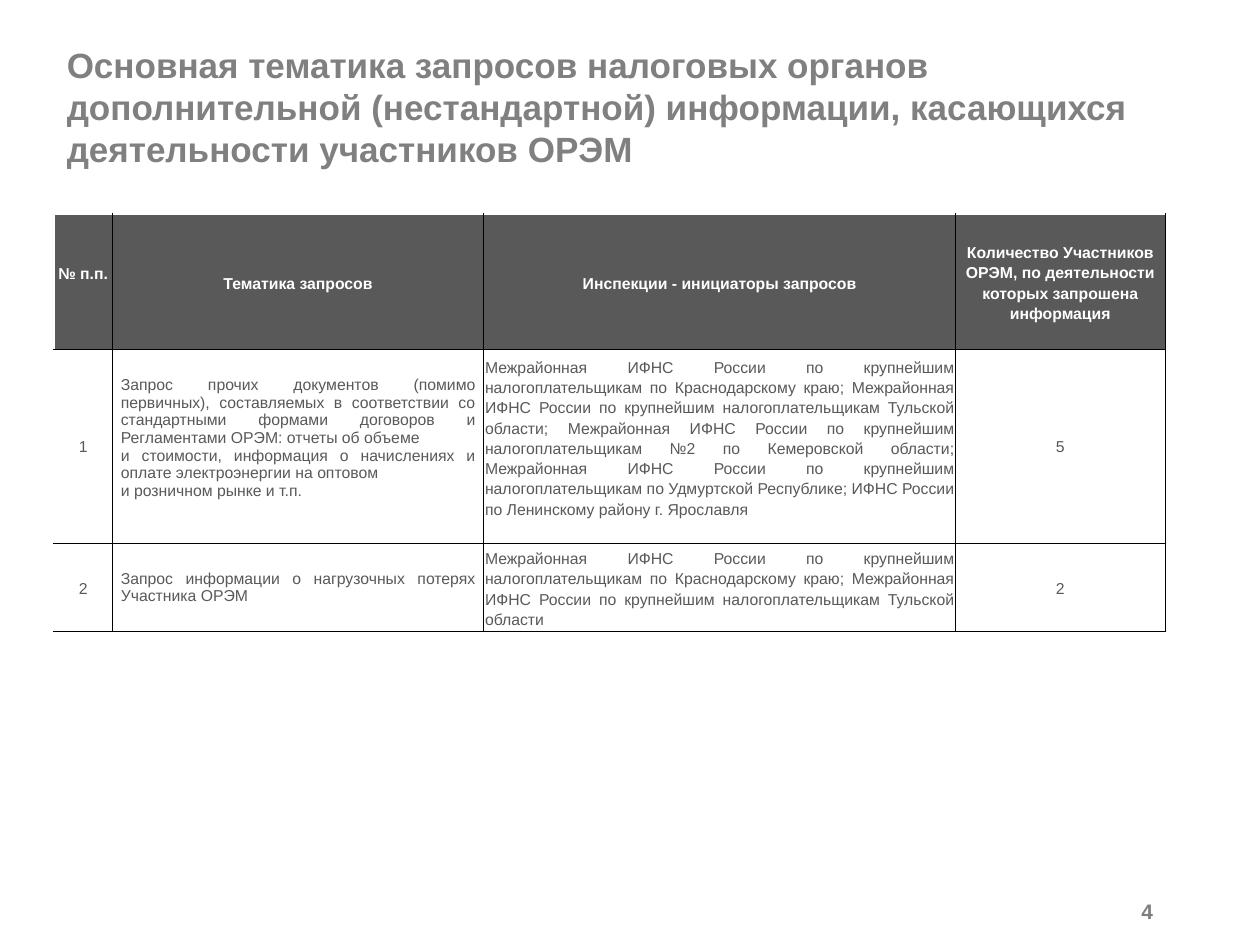
from lxml.etree import SubElement
from pptx import Presentation
from pptx.dml.color import RGBColor
from pptx.enum.text import MSO_ANCHOR, MSO_AUTO_SIZE, PP_ALIGN
from pptx.oxml.ns import qn
from pptx.util import Inches, Pt

TITLE = ("Основная тематика запросов налоговых органов дополнительной "
         "(нестандартной) информации, касающихся деятельности участников ОРЭМ")
HEADERS = ["№ п.п.", "Тематика запросов", "Инспекции - инициаторы запросов",
           "Количество Участников ОРЭМ, по деятельности которых запрошена информация"]
REGIONS = ("Межрайонная ИФНС России по крупнейшим налогоплательщикам по Краснодарскому краю; "
           "Межрайонная ИФНС России по крупнейшим налогоплательщикам Тульской области")
REQUESTS = [
    ["1",
     "Запрос прочих документов (помимо первичных), составляемых в соответствии со "
     "стандартными формами договоров и Регламентами ОРЭМ: отчеты об объеме\n"
     "и стоимости, информация о начислениях и оплате электроэнергии на оптовом\n"
     "и розничном рынке и т.п.",
     REGIONS + "; Межрайонная ИФНС России по крупнейшим налогоплательщикам №2 по "
     "Кемеровской области; Межрайонная ИФНС России по крупнейшим налогоплательщикам по "
     "Удмуртской Республике; ИФНС России по Ленинскому району г. Ярославля",
     "5"],
    ["2", "Запрос информации о нагрузочных потерях Участника ОРЭМ", REGIONS, "2"],
]
COLUMN_WIDTHS = [0.46, 2.95, 3.74, 1.67]
ROW_HEIGHTS = [1.07, 1.46, 0.65]
# Bottom margins that lift the text of single cells: (row, column)
LIFTS = {(0, 0): 0.13, (1, 1): 0.13, (1, 2): 0.15}


def color(value):
    return RGBColor.from_string(value)


def write(frame, text, size, hue, bold, align, spacing=None):
    frame.text = text
    frame.word_wrap = True
    for para in frame.paragraphs:
        para.alignment = align
        if spacing:
            para.line_spacing = spacing
        font = para.font
        font.name, font.size, font.bold = "Arial", Pt(size), bold
        font.color.rgb = color(hue)


def place(box, left, top, width, height):
    box.left, box.top = Inches(left), Inches(top)
    box.width, box.height = Inches(width), Inches(height)


def add_title(page):
    title = page.shapes.title
    place(title, 0.43, 0.3, 8.82, 1.09)
    write(title.text_frame, TITLE, 20, "808080", True, PP_ALIGN.LEFT)
    title.text_frame.auto_size = MSO_AUTO_SIZE.NONE
    title.text_frame.vertical_anchor = MSO_ANCHOR.MIDDLE


def add_page_number(page):
    box = page.shapes.add_textbox(Inches(8.15), Inches(7.06), Inches(1.1), Inches(0.34))
    write(box.text_frame, "4", 12, "7F7F7F", True, PP_ALIGN.RIGHT)
    box.text_frame.vertical_anchor = MSO_ANCHOR.MIDDLE


def set_borders(cell, sides):
    properties = cell._tc.get_or_add_tcPr()
    for side in sides:
        line = SubElement(properties, qn(f"a:ln{side}"), w=str(Pt(0.5)))
        fill = SubElement(line, qn("a:solidFill"))
        SubElement(fill, qn("a:srgbClr"), val="000000")


def format_cell(cell, text, row, column):
    header = row == 0
    justified = not header and column in (1, 2)
    tight = header or column == 2
    single = (row, column) == (0, 0) or (not header and column == 1)
    write(cell.text_frame, text, 9, "FFFFFF" if header else "595959", header,
          PP_ALIGN.JUSTIFY if justified else PP_ALIGN.CENTER,
          None if single else 1.15)
    cell.vertical_anchor = MSO_ANCHOR.MIDDLE
    cell.margin_left = cell.margin_right = Inches(0.01 if tight else 0.07)
    cell.margin_top = Inches(0.01 if tight else 0)
    cell.margin_bottom = Inches(LIFTS.get((row, column), 0))
    # The outer left and top edges stay open
    set_borders(cell, ("L" if column else "") + "R" + ("T" if row else "") + "B")
    cell.fill.solid()
    cell.fill.fore_color.rgb = color("595959" if header else "FFFFFF")


def add_request_table(page):
    rows = [HEADERS, *REQUESTS]
    table = page.shapes.add_table(
        len(rows), len(HEADERS), Inches(0.43), Inches(1.7),
        Inches(sum(COLUMN_WIDTHS)), Inches(sum(ROW_HEIGHTS))).table
    table.first_row = table.horz_banding = False
    for column, width in zip(table.columns, COLUMN_WIDTHS):
        column.width = Inches(width)
    for row, height in zip(table.rows, ROW_HEIGHTS):
        row.height = Inches(height)
    for i, texts in enumerate(rows):
        for j, text in enumerate(texts):
            format_cell(table.cell(i, j), text, i, j)


def main():
    deck = Presentation()
    deck.slide_width, deck.slide_height = Inches(10), Inches(7.5)
    page = deck.slides.add_slide(deck.slide_layouts[5])
    add_title(page)
    add_page_number(page)
    add_request_table(page)
    deck.save("out.pptx")


if __name__ == "__main__":
    main()
